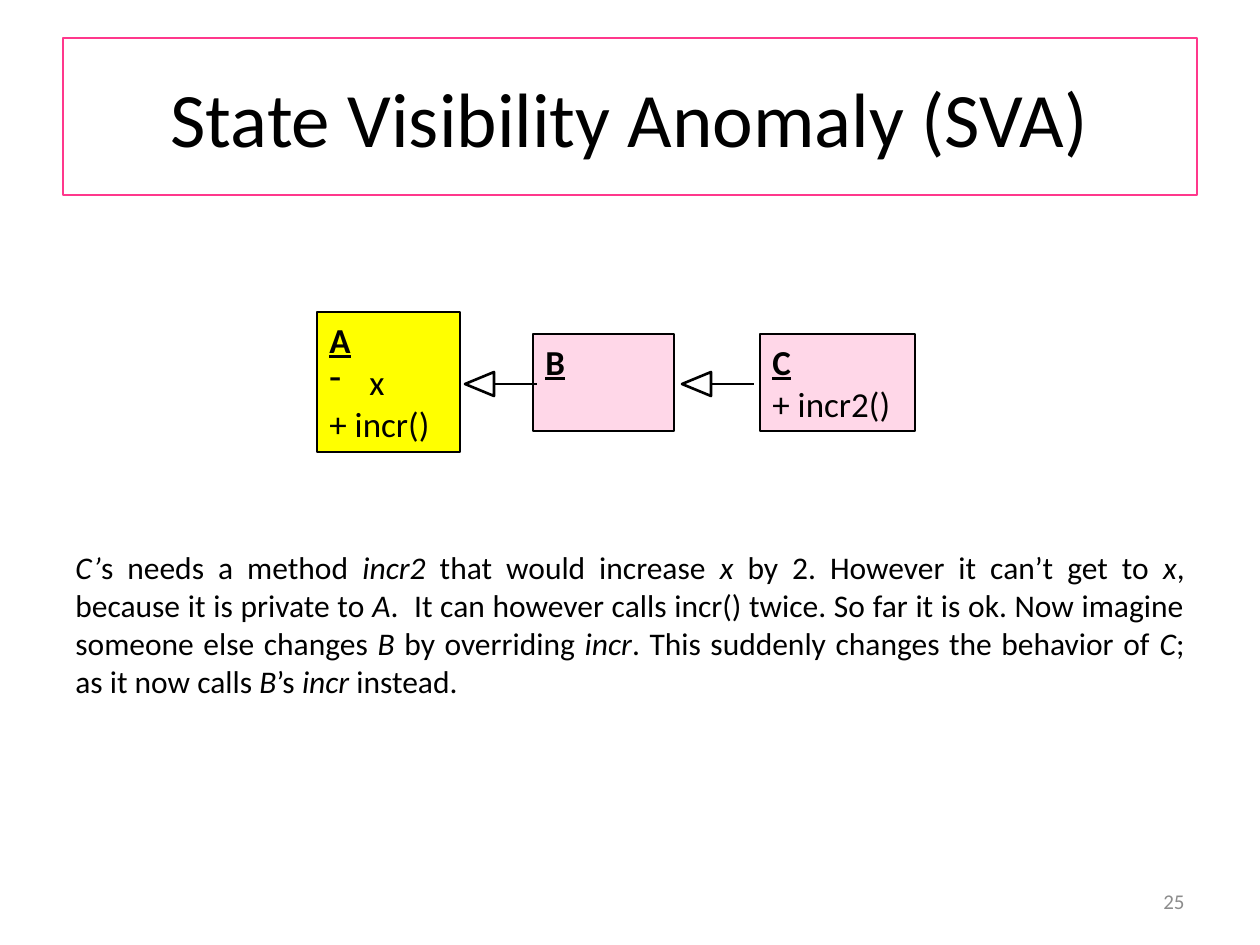
from itertools import cycle

from lxml import etree
from pptx import Presentation
from pptx.dml.color import RGBColor
from pptx.enum.shapes import MSO_CONNECTOR, MSO_SHAPE
from pptx.enum.text import MSO_ANCHOR, PP_ALIGN
from pptx.oxml.ns import qn
from pptx.util import Pt

EMU_PER_PX = 914400 / 126
FONT = "Calibri"
COLORS = {
    "ink": "000000",
    "title_line": "FF388C",
    "number": "8C8C8C",
    "base_class": "FFFF00",
    "subclass": "FFD7E8",
}
RECTANGLE, TRIANGLE = MSO_SHAPE.RECTANGLE, MSO_SHAPE.ISOSCELES_TRIANGLE
STRAIGHT = MSO_CONNECTOR.STRAIGHT
TOP, MIDDLE = MSO_ANCHOR.TOP, MSO_ANCHOR.MIDDLE
LEFT, CENTER, RIGHT, JUSTIFY = (
    PP_ALIGN.LEFT, PP_ALIGN.CENTER, PP_ALIGN.RIGHT, PP_ALIGN.JUSTIFY)
INSET = 13
BULLET_INDENT = 32

CLASSES = [
    ((317, 312, 143, 140), "base_class", "A", [("-", " x"), (None, "+ incr()")]),
    ((533, 334, 141, 97), "subclass", "B", []),
    ((760, 334, 155, 97), "subclass", "C", [(None, "+ incr2()")]),
]
GENERALIZATIONS = [(465, 372, 72, 24), (682, 372, 72, 24)]
EXPLANATION = [
    "C’", "s needs a method ", "incr2", " that would increase ", "x",
    " by 2. However it can’t get to ", "x", ", because it is private to ", "A",
    ".  It can however calls incr() twice. So far it is ok. "
    "Now imagine someone else changes ", "B", " by overriding ", "incr",
    ". This suddenly changes the behavior of ", "C", "; as it now calls ", "B",
    "’s ", "incr", " instead.",
]


def px(length):
    """Turn pixels into EMU."""
    return round(length * EMU_PER_PX)


def color(name):
    """Look up a named colour."""
    return RGBColor.from_string(COLORS[name])


def draw_line(line, name, width):
    """Set the colour and width of a line."""
    line.color.rgb = color(name)
    line.width = Pt(width)


def add_run(paragraph, text, size, name="ink", bold=False, italic=False, underline=False):
    """Append one formatted run to a paragraph."""
    run = paragraph.add_run()
    run.text = text
    font = run.font
    font.name, font.size = FONT, Pt(size)
    font.bold, font.italic, font.underline = bold, italic, underline
    font.color.rgb = color(name)


def add_text_box(slide, box, alignment, anchor):
    """Add a wrapping text box and return its first paragraph."""
    frame = slide.shapes.add_textbox(*map(px, box)).text_frame
    frame.word_wrap = True
    frame.vertical_anchor = anchor
    paragraph = frame.paragraphs[0]
    paragraph.alignment = alignment
    return paragraph


def add_title(slide, box, text):
    """Place the outlined title."""
    title = slide.shapes.title
    title.left, title.top, title.width, title.height = map(px, box)
    draw_line(title.line, "title_line", 0.75)
    title.text_frame.vertical_anchor = MIDDLE
    paragraph = title.text_frame.paragraphs[0]
    paragraph.alignment = CENTER
    add_run(paragraph, text, 44)


def set_tab_stop(paragraph, position):
    """Give a paragraph one left tab stop."""
    tabs = etree.SubElement(paragraph._p.get_or_add_pPr(), qn("a:tabLst"))
    etree.SubElement(tabs, qn("a:tab"), pos=str(px(position)), algn="l")


def set_bullet(paragraph, character):
    """Give a paragraph a hanging bullet."""
    properties = paragraph._p.get_or_add_pPr()
    properties.set("marL", str(px(BULLET_INDENT)))
    properties.set("indent", str(-px(BULLET_INDENT)))
    etree.SubElement(properties, qn("a:buChar"), char=character)


def add_class(slide, box, fill, name, members):
    """Draw a class box with an underlined name above its members."""
    shape = slide.shapes.add_shape(RECTANGLE, *map(px, box))
    shape.shadow.inherit = False
    shape.fill.solid()
    shape.fill.fore_color.rgb = color(fill)
    draw_line(shape.line, "ink", 0.75)
    frame = shape.text_frame
    frame.word_wrap = True
    frame.vertical_anchor = TOP
    heading = frame.paragraphs[0]
    heading.alignment = LEFT
    set_tab_stop(heading, box[2] - 2 * INSET - 1)
    add_run(heading, name + "\t", 20, bold=True, underline=True)
    for bullet, text in members:
        paragraph = frame.add_paragraph()
        paragraph.alignment = LEFT
        if bullet:
            set_bullet(paragraph, bullet)
        add_run(paragraph, text, 20)


def add_generalization(slide, box):
    """Draw a hollow triangle pointing left with a line behind it."""
    left, top, width, height = box
    length = 29
    shift = (length - height) / 2
    triangle = slide.shapes.add_shape(
        TRIANGLE, px(left + shift), px(top - shift), px(height), px(length))
    triangle.rotation = 270
    triangle.shadow.inherit = False
    triangle.fill.background()
    draw_line(triangle.line, "ink", 1.5)
    middle = px(top + height / 2)
    connector = slide.shapes.add_connector(
        STRAIGHT, px(left + width), middle, px(left + length), middle)
    draw_line(connector.line, "ink", 0.75)
    etree.SubElement(connector._element.spPr, qn("a:effectLst"))


def add_explanation(slide, box, pieces):
    """Write the explanation, whose pieces alternate italic and upright."""
    paragraph = add_text_box(slide, box, JUSTIFY, TOP)
    for text, italic in zip(pieces, cycle([True, False])):
        add_run(paragraph, text, 18, italic=italic)


def add_slide_number(slide, box, text):
    """Write the slide number."""
    add_run(add_text_box(slide, box, RIGHT, MIDDLE), text, 12, "number")


def main():
    """Build and save the slide."""
    presentation = Presentation()
    presentation.slide_width, presentation.slide_height = px(1260), px(945)
    slide = presentation.slides.add_slide(presentation.slide_layouts[5])
    add_title(slide, (63, 38, 1134, 157), "State Visibility Anomaly (SVA)")
    add_slide_number(slide, (903, 876, 294, 50), "25")
    for class_box in CLASSES:
        add_class(slide, *class_box)
    for box in GENERALIZATIONS:
        add_generalization(slide, box)
    add_explanation(slide, (63, 542, 1134, 165), EXPLANATION)
    presentation.save("out.pptx")


if __name__ == "__main__":
    main()
